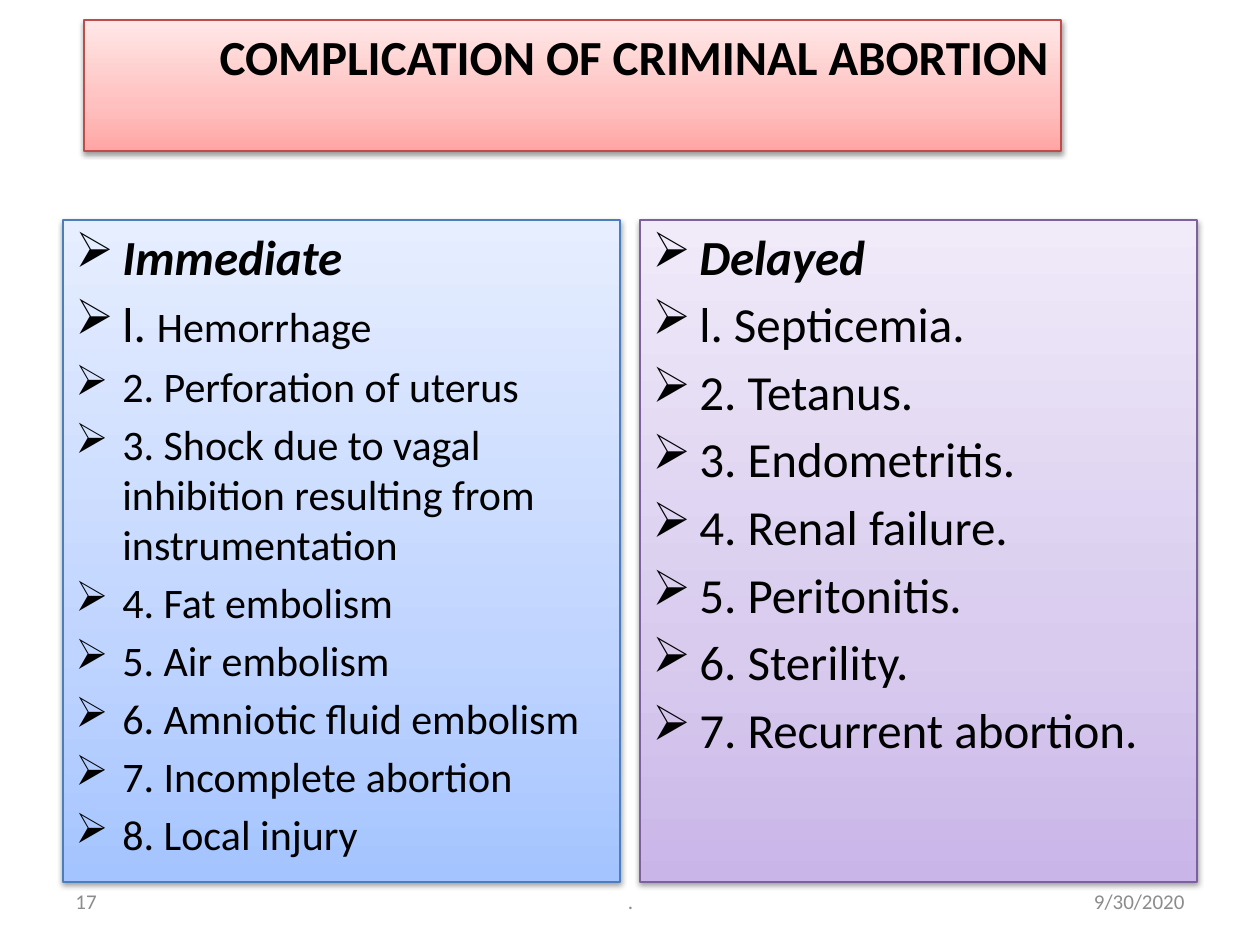
import dataclasses
import typing

import lxml.etree
import pptx
import pptx.dml.color
import pptx.enum.shapes
import pptx.enum.text
import pptx.oxml
import pptx.oxml.ns
import pptx.util

SCALE = 914400 / 126
FONT = "Calibri"
BLACK = "000000"
GREY = "8C8C8C"
LARGE, SMALL, TINY = 28, 24, 12
INDENT = 47
ALIGN = pptx.enum.text.PP_ALIGN
ANCHOR = pptx.enum.text.MSO_ANCHOR


class Box(typing.NamedTuple):
    left: int
    top: int
    width: int
    height: int


class Run(typing.NamedTuple):
    text: str
    size: int = LARGE
    bold: bool = False
    slant: bool = False
    tint: str = BLACK


@dataclasses.dataclass
class Panel:
    box: Box
    stops: tuple[str, str, str]  # from bottom to top
    edge: str
    lines: list[list[Run]]
    align: ALIGN = ALIGN.LEFT
    listed: bool = True


@dataclasses.dataclass
class Note:
    box: Box
    text: str
    align: ALIGN


def px(count: int) -> int:
    return round(count * SCALE)


def rgb(code: str) -> pptx.dml.color.RGBColor:
    return pptx.dml.color.RGBColor.from_string(code)


def xml(body: str) -> lxml.etree._Element:
    """Parse one element, adding the drawing namespace to its tag."""
    tag, rest = body[1:].split(" ", 1)
    return pptx.oxml.parse_xml(f"<{tag} {pptx.oxml.ns.nsdecls('a')} {rest}")


def write(para: typing.Any, runs: list[Run], align: ALIGN) -> None:
    para.alignment = align
    for item in runs:
        run = para.add_run()
        run.text = item.text
        font = run.font
        font.name, font.size = FONT, pptx.util.Pt(item.size)
        font.bold, font.italic = item.bold, item.slant
        font.color.rgb = rgb(item.tint)


def mark(para: typing.Any, size: int) -> None:
    """Give a paragraph its arrow bullet, hanging indent and gap."""
    para.space_before = pptx.util.Pt(round(size * 0.18, 1))
    props = para._p.get_or_add_pPr()
    props.set("marL", str(px(INDENT)))
    props.set("indent", str(-px(INDENT)))
    props.append(xml('<a:buChar char="➢"/>'))


def shade(shape: typing.Any, stops: tuple[str, str, str]) -> None:
    """Fill with a vertical gradient and add a soft shadow below."""
    steps = "".join(
        f'<a:gs pos="{pos * 1000}"><a:srgbClr val="{code}"/></a:gs>'
        for pos, code in zip((0, 35, 100), stops)
    )
    shape.fill.gradient()
    props = shape._element.spPr
    old = props.find(pptx.oxml.ns.qn("a:gradFill"))
    props.replace(old, xml(
        f'<a:gradFill rotWithShape="1"><a:gsLst>{steps}</a:gsLst>'
        '<a:lin ang="16200000" scaled="0"/></a:gradFill>'
    ))
    shape.shadow.inherit = False
    props.find(pptx.oxml.ns.qn("a:effectLst")).append(xml(
        '<a:outerShdw blurRad="40000" dist="20000" dir="5400000" rotWithShape="0">'
        '<a:srgbClr val="000000"><a:alpha val="38000"/></a:srgbClr></a:outerShdw>'
    ))


def draw_panel(shapes: typing.Any, panel: Panel) -> None:
    rect = pptx.enum.shapes.MSO_SHAPE.RECTANGLE
    shape = shapes.add_shape(rect, *map(px, panel.box))
    shape.line.color.rgb = rgb(panel.edge)
    shape.line.width = pptx.util.Pt(0.75)
    shade(shape, panel.stops)
    frame = shape.text_frame
    frame.word_wrap, frame.vertical_anchor = True, ANCHOR.TOP
    for spot, runs in enumerate(panel.lines):
        para = frame.add_paragraph() if spot else frame.paragraphs[0]
        write(para, runs, panel.align)
        if panel.listed:
            mark(para, runs[0].size)


def draw_note(shapes: typing.Any, note: Note) -> None:
    frame = shapes.add_textbox(*map(px, note.box)).text_frame
    frame.word_wrap, frame.vertical_anchor = True, ANCHOR.MIDDLE
    write(frame.paragraphs[0], [Run(note.text, TINY, tint=GREY)], note.align)


def head(text: str) -> list[Run]:
    return [Run(text, bold=True, slant=True)]


EARLY = [
    "2. Perforation of uterus",
    "3. Shock due to vagal inhibition resulting from instrumentation",
    "4. Fat embolism",
    "5. Air embolism",
    "6. Amniotic fluid embolism",
    "7. Incomplete abortion",
    "8. Local injury",
]
LATE = [
    "l. Septicemia.",
    "2. Tetanus.",
    "3. Endometritis.",
    "4. Renal failure.",
    "5. Peritonitis.",
    "6. Sterility.",
    "7. Recurrent abortion.",
]
PANELS = [
    Panel(Box(84, 20, 977, 131), ("FFA6A5", "FFC0BF", "FFE7E7"), "BF4C48",
          [[Run("COMPLICATION OF CRIMINAL ABORTION", bold=True)]],
          ALIGN.RIGHT, listed=False),
    Panel(Box(63, 220, 557, 662), ("A4C4FF", "BFD4FF", "E6EEFF"), "4B7EBC",
          [head("Immediate"), [Run("l. "), Run("Hemorrhage", SMALL)]]
          + [[Run(text, SMALL)] for text in EARLY]),
    Panel(Box(640, 220, 557, 662), ("C9B5E8", "D8CBEE", "F0EAF9"), "7D60A0",
          [head("Delayed")] + [[Run(text)] for text in LATE]),
]
NOTES = [
    Note(Box(903, 876, 294, 50), "9/30/2020", ALIGN.RIGHT),
    Note(Box(431, 876, 399, 50), ".", ALIGN.CENTER),
    Note(Box(63, 876, 294, 50), "17", ALIGN.LEFT),
]


def main() -> None:
    deck = pptx.Presentation()
    deck.slide_width, deck.slide_height = px(1260), px(945)
    shapes = deck.slides.add_slide(deck.slide_layouts[6]).shapes
    for panel in PANELS:
        draw_panel(shapes, panel)
    for note in NOTES:
        draw_note(shapes, note)
    deck.save("out.pptx")


if __name__ == "__main__":
    main()
